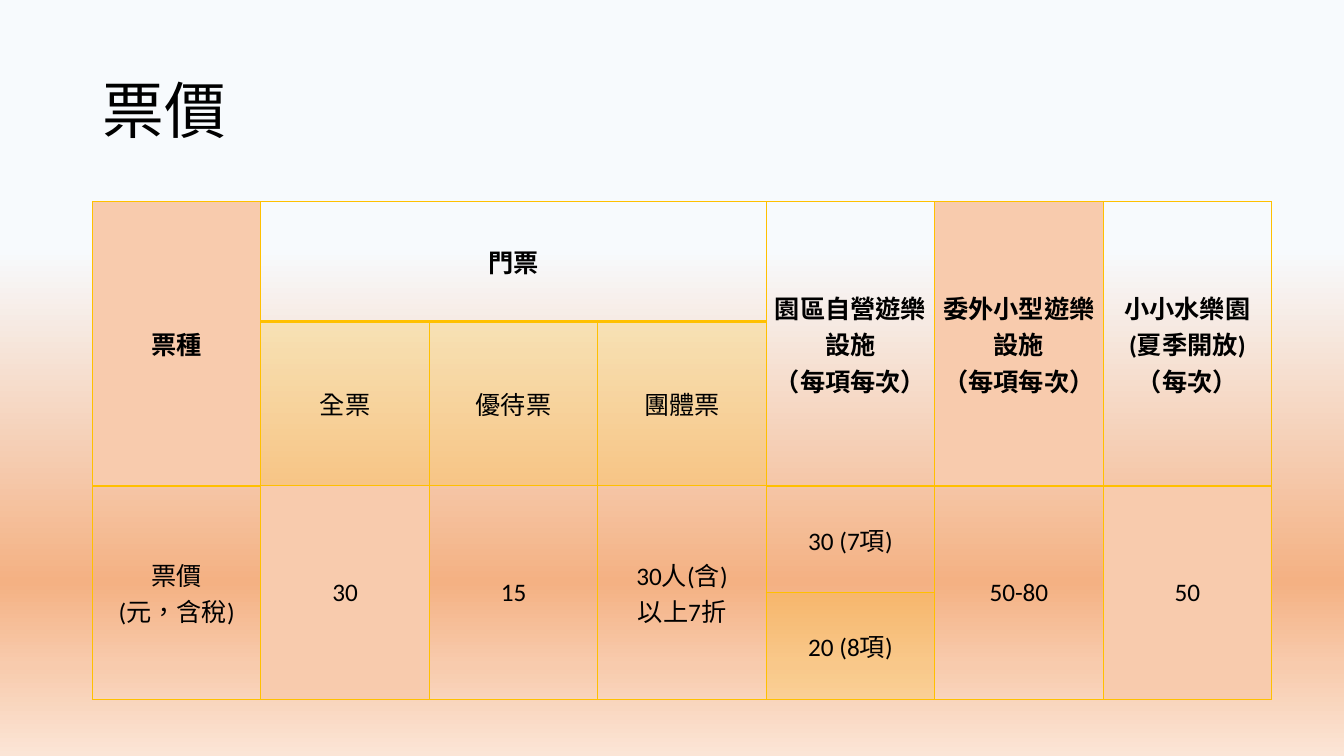
from dataclasses import dataclass
from typing import Optional

import pptx
import pptx.dml.color
import pptx.enum.lang
import pptx.enum.text
import pptx.oxml
import pptx.oxml.ns
import pptx.util
from pptx.util import Cm


@dataclass(frozen=True)
class Theme:
    font: str = "Calibri"
    title_size: int = 44
    cell_size: int = 18
    ink: str = "000000"
    peach: str = "F8CBAD"
    gold: str = "FFC000"
    gold_alpha: int = 20
    thin: int = 1
    thick: int = 2
    backdrop: tuple = ((33, "F7FAFD"), (77, "F4B183"), (88, "F8CBAD"), (100, "FBE5D6"))


THEME = Theme()


@dataclass(frozen=True)
class Entry:
    row: int
    column: int
    text: str
    rows: int = 1
    columns: int = 1
    fill: Optional[str] = None
    alpha: Optional[int] = None
    header: bool = False


def heading(column: int, text: str, **options) -> Entry:
    return Entry(0, column, text, header=True, **options)


def tinted(row: int, column: int, text: str) -> Entry:
    return Entry(row, column, text, fill=THEME.gold, alpha=THEME.gold_alpha)


def price(column: int, text: str, fill: Optional[str] = None) -> Entry:
    return Entry(2, column, text, rows=2, fill=fill)


ENTRIES = [
    heading(0, "票種", rows=2, fill=THEME.peach),
    heading(1, "門票", columns=3),
    heading(4, "園區自營遊樂設施\n（每項每次）", rows=2),
    heading(5, "委外小型遊樂設施\n（每項每次）", rows=2, fill=THEME.peach),
    heading(6, "小小水樂園\n(夏季開放)\n（每次）", rows=2),
    tinted(1, 1, "全票"),
    tinted(1, 2, "優待票"),
    tinted(1, 3, "團體票"),
    price(0, "票價\n(元，含稅)"),
    price(1, "30", THEME.peach),
    price(2, "15"),
    price(3, "30人(含)\n以上7折"),
    Entry(2, 4, "30 (7項)"),
    tinted(3, 4, "20 (8項)"),
    price(5, "50-80"),
    price(6, "50", THEME.peach),
]
TABLE_WIDTH = 29.72
COLUMN_COUNT = 7
ROW_HEIGHTS = [3.02, 4.14, 2.69, 2.69]


def write_text(frame, text: str, *, size: int, align, bold: bool = False,
               line_spacing: Optional[float] = None) -> None:
    para = frame.paragraphs[0]
    para.text = text
    para.alignment = align
    para.line_spacing = line_spacing
    for span in para.runs:
        span.font.name = THEME.font
        span.font.size = pptx.util.Pt(size)
        span.font.bold = bold
        span.font.language_id = pptx.enum.lang.MSO_LANGUAGE_ID.TRADITIONAL_CHINESE
        span.font.color.rgb = pptx.dml.color.RGBColor.from_string(THEME.ink)


def paint_background(page) -> None:
    page.background.fill.gradient()
    gradient = page.element.find(".//" + pptx.oxml.ns.qn("a:gradFill"))
    stops = "".join(f'<a:gs pos="{place * 1000}"><a:srgbClr val="{color}"/></a:gs>'
                    for place, color in THEME.backdrop)
    namespace = pptx.oxml.ns.nsdecls("a")
    for child in list(gradient):
        gradient.remove(child)
    gradient.append(pptx.oxml.parse_xml(f"<a:gsLst {namespace}>{stops}</a:gsLst>"))
    gradient.append(pptx.oxml.parse_xml(f'<a:lin {namespace} ang="5400000" scaled="0"/>'))


def draw_borders(cell, bottom: int) -> None:
    properties = cell._tc.get_or_add_tcPr()
    widths = {"L": THEME.thin, "R": THEME.thin, "T": THEME.thin, "B": bottom}
    for side, width in widths.items():
        properties.append(pptx.oxml.parse_xml(
            f'<a:ln{side} {pptx.oxml.ns.nsdecls("a")} w="{pptx.util.Pt(width)}">'
            f'<a:solidFill><a:srgbClr val="{THEME.gold}"/></a:solidFill></a:ln{side}>'))


def fill_cell(cell, color: Optional[str], alpha: Optional[int]) -> None:
    if color is None:
        cell.fill.background()
        return
    cell.fill.solid()
    cell.fill.fore_color.rgb = pptx.dml.color.RGBColor.from_string(color)
    if alpha is not None:
        swatch = cell._tc.tcPr.find(
            pptx.oxml.ns.qn("a:solidFill") + "/" + pptx.oxml.ns.qn("a:srgbClr"))
        swatch.append(pptx.oxml.parse_xml(
            f'<a:alpha {pptx.oxml.ns.nsdecls("a")} val="{alpha * 1000}"/>'))


def write_entry(table, entry: Entry) -> None:
    cell = table.cell(entry.row, entry.column)
    if entry.rows * entry.columns > 1:
        cell.merge(table.cell(entry.row + entry.rows - 1, entry.column + entry.columns - 1))
    cell.margin_left = cell.margin_right = Cm(0.08)
    cell.margin_top = cell.margin_bottom = Cm(0.08)
    cell.vertical_anchor = pptx.enum.text.MSO_ANCHOR.MIDDLE
    fill_cell(cell, entry.fill, entry.alpha)
    write_text(cell.text_frame, entry.text, size=THEME.cell_size, bold=entry.header,
               align=pptx.enum.text.PP_ALIGN.CENTER)


def add_price_table(page) -> None:
    table = page.shapes.add_table(
        len(ROW_HEIGHTS), COLUMN_COUNT, Cm(2.33), Cm(5.08),
        Cm(TABLE_WIDTH), Cm(sum(ROW_HEIGHTS))).table
    table.first_row = table.horz_banding = False
    for column in table.columns:
        column.width = Cm(TABLE_WIDTH / COLUMN_COUNT)
    for row, height in zip(table.rows, ROW_HEIGHTS):
        row.height = Cm(height)

    # A thick rule runs under every header
    ruled = {(entry.row + down, entry.column + across)
             for entry in ENTRIES if entry.header
             for down in range(entry.rows) for across in range(entry.columns)}
    for row in range(len(ROW_HEIGHTS)):
        for column in range(COLUMN_COUNT):
            cell = table.cell(row, column)
            draw_borders(cell, THEME.thick if (row, column) in ruled else THEME.thin)
            fill_cell(cell, None, None)
    for entry in ENTRIES:
        write_entry(table, entry)


def main() -> None:
    deck = pptx.Presentation()
    deck.slide_width, deck.slide_height = Cm(33.87), Cm(19.05)
    page = deck.slides.add_slide(deck.slide_layouts.get_by_name("Title Only"))
    paint_background(page)

    # Title
    title = page.shapes.title
    title.left, title.top, title.width, title.height = Cm(2.33), Cm(1.01), Cm(29.21), Cm(3.68)
    title.text_frame.vertical_anchor = pptx.enum.text.MSO_ANCHOR.MIDDLE
    write_text(title.text_frame, "票價", size=THEME.title_size, line_spacing=0.9,
               align=pptx.enum.text.PP_ALIGN.LEFT)

    # Ticket prices
    add_price_table(page)
    deck.save("out.pptx")


if __name__ == "__main__":
    main()
